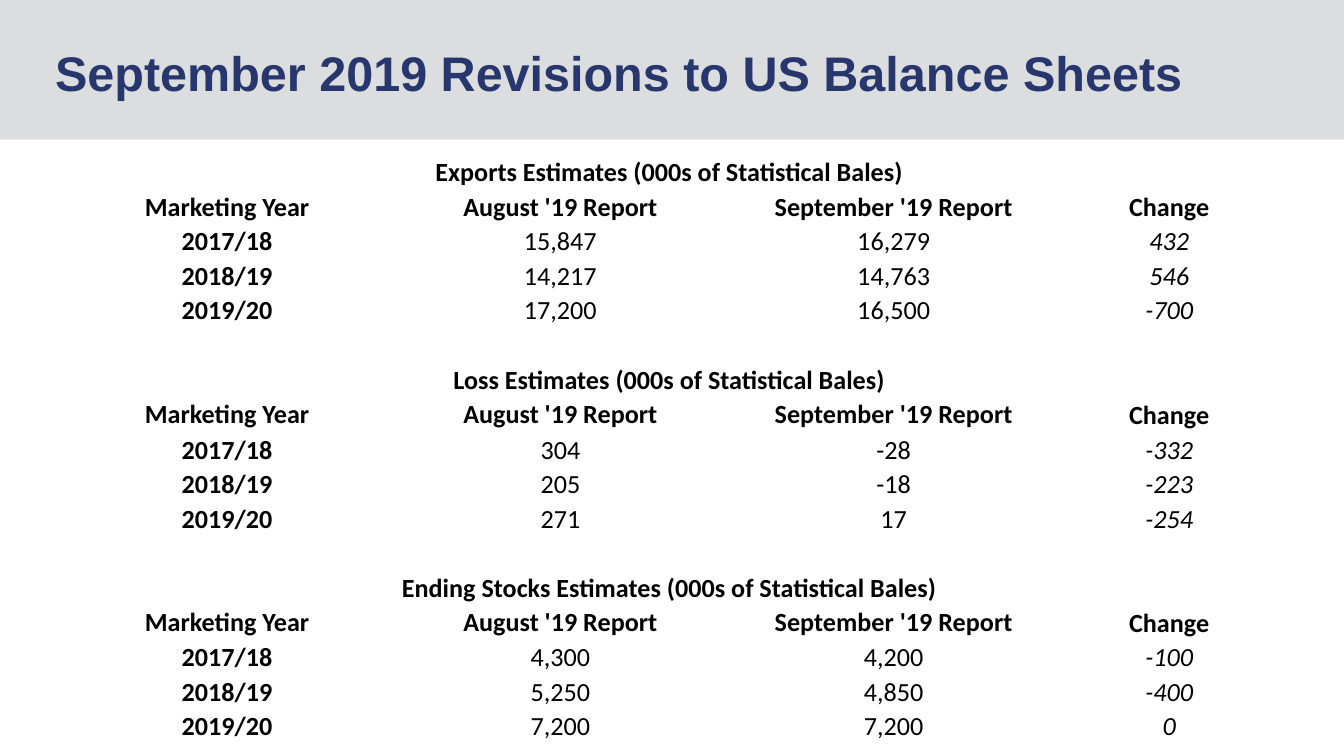
"""Build the slide of September 2019 revisions to US balance sheets."""
from lxml.etree import SubElement
from pptx import Presentation
from pptx.dml.color import RGBColor
from pptx.enum.shapes import MSO_SHAPE as Shape
from pptx.enum.text import MSO_ANCHOR as Anchor, PP_ALIGN as Align
from pptx.oxml.ns import qn
from pptx.util import Inches, Pt

HEADS = ["Marketing Year", "August '19 Report", "September '19 Report", "Change"]
YEARS = ["2017/18", "2018/19", "2019/20"]
BLOCKS = [
    ("Exports", [("15,847", "16,279", "432"),
                 ("14,217", "14,763", "546"),
                 ("17,200", "16,500", "-700")]),
    ("Loss", [("304", "-28", "-332"),
              ("205", "-18", "-223"),
              ("271", "17", "-254")]),
    ("Ending Stocks", [("4,300", "4,200", "-100"),
                       ("5,250", "4,850", "-400"),
                       ("7,200", "7,200", "0")]),
]
WIDTHS = [2.48, 2.48, 2.48, 1.62]
STEP = 6


def color(code):
    return RGBColor.from_string(code)


class Deck:
    navy, gray, black = "27376E", "DCDDDE", "000000"
    size = 14

    def __init__(self):
        self.prs = Presentation()
        self.prs.slide_width = Inches(10)
        self.prs.slide_height = Inches(10) * 9 // 16
        self.slide = self.prs.slides.add_slide(self.prs.slide_layouts[5])

    def run(self, para, text, face, size, code, bold=False, slant=False):
        run = para.add_run()
        run.text = text
        font = run.font
        font.name, font.size = face, Pt(size)
        font.bold, font.italic = bold, slant
        font.color.rgb = color(code)

    def band(self, height):
        band = self.slide.shapes.add_shape(
            Shape.RECTANGLE, 0, 0, self.prs.slide_width, Inches(height))
        band.shadow.inherit = False
        band.fill.solid()
        band.fill.fore_color.rgb = color(self.gray)
        band.line.fill.background()
        return band

    def title(self, text):
        title = self.slide.shapes.title
        self.band(1.04).element.addnext(title.element)
        title.left, title.top = Inches(0.31), Inches(0.09)
        title.width, title.height = Inches(8.64), Inches(0.89)
        frame = title.text_frame
        frame.word_wrap = True
        frame.vertical_anchor = Anchor.MIDDLE
        para = frame.paragraphs[0]
        para.alignment = Align.LEFT
        self.run(para, text, "Arial", 26, self.navy, True)

    def table(self, count):
        table = self.slide.shapes.add_table(
            count, len(WIDTHS), Inches(0.45), Inches(1.15),
            Inches(sum(WIDTHS)), Inches(4.38)).table
        table.first_row = table.horz_banding = False
        for col, width in zip(table.columns, WIDTHS):
            col.width = Inches(width)
        for cell in table.iter_cells():
            cell.fill.background()
            cell.margin_left = cell.margin_right = cell.margin_top = Inches(0.01)
            cell.margin_bottom = 0
            para = cell.text_frame.paragraphs[0]
            para.alignment = Align.CENTER
            SubElement(para._p, qn("a:endParaRPr"), sz=str(self.size * 100))
        return table

    def cell(self, cell, text, anchor, bold=True, slant=False):
        cell.vertical_anchor = anchor
        self.run(cell.text_frame.paragraphs[0], text, "Calibri", self.size,
                 self.black, bold, slant)

    def block(self, table, top, name, rows):
        base = Anchor.BOTTOM if top else Anchor.MIDDLE
        head = table.cell(top, 0)
        head.merge(table.cell(top, 3))
        self.cell(head, f"{name} Estimates (000s of Statistical Bales)", base)
        for col, text in enumerate(HEADS):
            self.cell(table.cell(top + 1, col), text,
                      base if col == 3 else Anchor.MIDDLE)
        for row, (year, vals) in enumerate(zip(YEARS, rows), top + 2):
            for col, text in enumerate((year, *vals)):
                self.cell(table.cell(row, col), text, base, col == 0, col == 3)


def main():
    deck = Deck()
    deck.title("September 2019 Revisions to US Balance Sheets")
    table = deck.table(STEP * len(BLOCKS) - 1)
    for num, (name, rows) in enumerate(BLOCKS):
        deck.block(table, num * STEP, name, rows)
    deck.prs.save("out.pptx")


if __name__ == "__main__":
    main()
